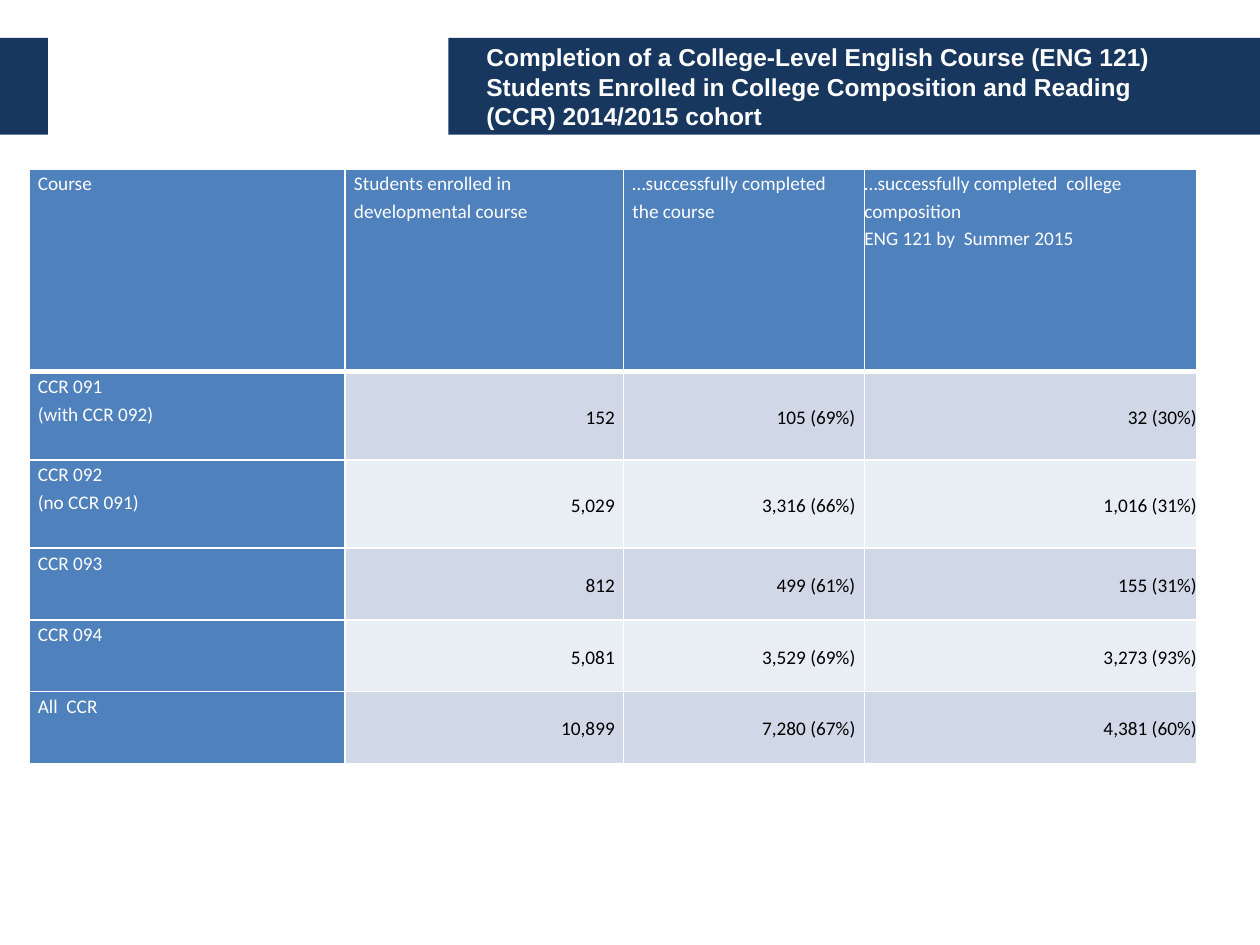
from dataclasses import dataclass

from lxml import etree
from pptx import Presentation
from pptx.dml.color import RGBColor
from pptx.enum import shapes, text
from pptx.oxml import ns
from pptx.util import Inches, Pt


@dataclass(frozen=True)
class Theme:
    """Colours, fonts and type sizes of the slide."""
    navy: str = "17375E"
    blue: str = "4F81BD"
    bands: tuple = ("D0D8E8", "E9EDF4")
    white: str = "FFFFFF"
    black: str = "000000"
    title_font: str = "Arial"
    table_font: str = "Calibri"
    title_size: int = 14
    table_size: int = 11


THEME = Theme()
TITLE = ("Completion of a College-Level English Course (ENG 121) Students Enrolled in "
         "College Composition and Reading (CCR) 2014/2015 cohort")
COLS = (2.51, 2.21, 1.91, 2.64)
ROWS = (1.61, 0.7, 0.7, 0.57, 0.57, 0.57)
CELLS = (
    ("Course", "Students enrolled in developmental course",
     "…successfully completed the course",
     "…successfully completed  college composition\nENG 121 by  Summer 2015"),
    ("CCR 091\n(with CCR 092)", "152", "105 (69%)", "32 (30%)"),
    ("CCR 092\n(no CCR 091)", "5,029", "3,316 (66%)", "1,016 (31%)"),
    ("CCR 093", "812", "499 (61%)", "155 (31%)"),
    ("CCR 094", "5,081", "3,529 (69%)", "3,273 (93%)"),
    ("All  CCR", "10,899", "7,280 (67%)", "4,381 (60%)"),
)


def rgb(color):
    """Turn a hex string into a colour."""
    return RGBColor.from_string(color)


def add_run(p, wording, font, size, color, bold=False):
    """Add one formatted run to a paragraph."""
    r = p.add_run()
    r.text = wording
    r.font.name, r.font.size, r.font.bold = font, Pt(size), bold
    r.font.color.rgb = rgb(color)


def add_band(s, left, top, width, height):
    """Draw one navy block of the header."""
    sp = s.shapes.add_shape(shapes.MSO_SHAPE.RECTANGLE, Inches(left), Inches(top),
                            Inches(width), Inches(height))
    sp.shadow.inherit = False
    sp.fill.solid()
    sp.fill.fore_color.rgb = rgb(THEME.navy)
    sp.line.fill.background()


def add_header(s, left, top, width, height):
    """Place the header blocks with the title above them."""
    add_band(s, left + 3.56, top, width - 3.56, height)
    add_band(s, left, top, 0.38, height)
    title = s.shapes.title
    title.element.getparent().append(title.element)
    title.left, title.top = Inches(left + 3.76), Inches(top)
    title.width, title.height = Inches(width - 4.26), Inches(height)
    tf = title.text_frame
    tf.word_wrap = True
    tf.auto_size = text.MSO_AUTO_SIZE.NONE
    tf.vertical_anchor = text.MSO_ANCHOR.MIDDLE
    p = tf.paragraphs[0]
    p.alignment = text.PP_ALIGN.LEFT
    add_run(p, TITLE, THEME.title_font, THEME.title_size, THEME.white, True)


def set_borders(cell, **widths):
    """Give each named side of a cell a white line of its width in points."""
    tcPr = cell._tc.get_or_add_tcPr()
    for i, (side, width) in enumerate(widths.items()):
        ln = etree.Element(ns.qn(f"a:{side}"), w=str(Pt(width)))
        fill = etree.SubElement(ln, ns.qn("a:solidFill"))
        etree.SubElement(fill, ns.qn("a:srgbClr"), val=THEME.white)
        tcPr.insert(i, ln)


def fill_cell(cell, wording, row, col):
    """Write and format one cell by its place in the table."""
    heading = row == 0 or col == 0
    last = col == len(COLS) - 1
    cell.margin_left = cell.margin_right = Inches(0 if last else 0.07)
    cell.margin_top = cell.margin_bottom = 0
    cell.vertical_anchor = text.MSO_ANCHOR.TOP if heading else text.MSO_ANCHOR.MIDDLE
    cell.fill.solid()
    cell.fill.fore_color.rgb = rgb(THEME.blue if heading else THEME.bands[(row - 1) % 2])
    set_borders(cell, lnL=1, lnR=1, lnT=3 if row == 1 else 1, lnB=3 if row == 0 else 1)
    tf = cell.text_frame
    lines = wording.split("\n")
    for i, line in enumerate(lines):
        p = tf.add_paragraph() if i else tf.paragraphs[0]
        p.alignment = text.PP_ALIGN.LEFT if heading else text.PP_ALIGN.RIGHT
        p.line_spacing = 1.15
        p.space_after = Pt(10 if len(lines) == 1 else 0)
        add_run(p, line, THEME.table_font, THEME.table_size,
                THEME.white if heading else THEME.black)


def add_course_table(s, left, top):
    """Place the table of course completions."""
    table = s.shapes.add_table(len(ROWS), len(COLS), Inches(left), Inches(top),
                               Inches(sum(COLS)), Inches(sum(ROWS))).table
    table.first_col = True
    for column, width in zip(table.columns, COLS):
        column.width = Inches(width)
    for row, height in zip(table.rows, ROWS):
        row.height = Inches(height)
    for i, row in enumerate(CELLS):
        for j, wording in enumerate(row):
            fill_cell(table.cell(i, j), wording, i, j)


def main():
    """Build and save the slide."""
    prs = Presentation()
    prs.slide_width, prs.slide_height = Inches(10), Inches(7.5)
    s = prs.slides.add_slide(prs.slide_layouts[5])
    add_header(s, 0, 0.3, 10, 0.77)
    add_course_table(s, 0.23, 1.34)
    prs.save("out.pptx")


if __name__ == "__main__":
    main()
